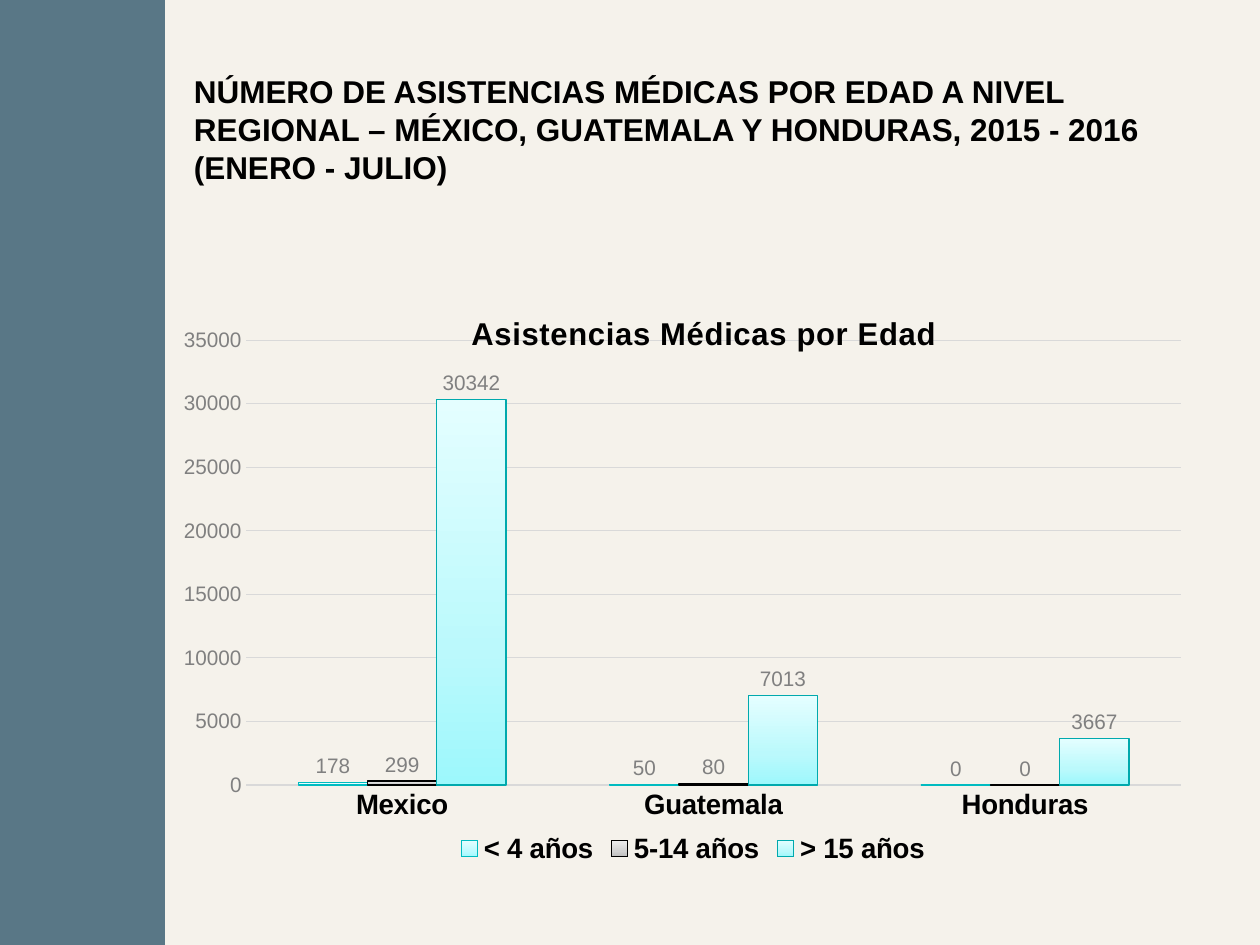
from lxml import etree
from pptx import Presentation
from pptx.chart.data import CategoryChartData
from pptx.dml.color import RGBColor
from pptx.enum import chart as charts, shapes, text
from pptx.oxml import parse_xml
from pptx.oxml.ns import nsdecls, qn
from pptx.util import Pt

CREAM = RGBColor(0xF5, 0xF2, 0xEB)
SLATE = RGBColor(0x59, 0x77, 0x86)
BLACK = RGBColor(0, 0, 0)
GRAY = RGBColor(0x80, 0x80, 0x80)
GRID = RGBColor(0xD9, 0xD9, 0xD9)
AQUA = [RGBColor(0xA2, 0xFA, 0xFF), RGBColor(0xBD, 0xFB, 0xFF), RGBColor(0xE6, 0xFE, 0xFF)]
SILVER = [RGBColor(0xBD, 0xBD, 0xBD), RGBColor(0xD1, 0xD1, 0xD1), RGBColor(0xEE, 0xEE, 0xEE)]
CYAN = [RGBColor(0x9D, 0xF8, 0xFC), RGBColor(0xBB, 0xF9, 0xFC), RGBColor(0xE4, 0xFE, 0xFF)]
AQUA_LINE = RGBColor(0, 0xBB, 0xC0)
CYAN_LINE = RGBColor(0, 0xA9, 0xAD)

AGE_GROUPS = [
    ("< 4 años", (178, 50, 0), AQUA, AQUA_LINE),
    ("5-14 años", (299, 80, 0), SILVER, BLACK),
    ("> 15 años", (30342, 7013, 3667), CYAN, CYAN_LINE),
]


def style_font(font, size, color, bold=False):
    font.name = "Arial"
    font.size = Pt(size)
    font.bold = bold
    font.color.rgb = color


def manual_layout(**values):
    layout = parse_xml(f"<c:layout {nsdecls('c')}><c:manualLayout/></c:layout>")
    for name, value in values.items():
        etree.SubElement(layout[0], qn(f"c:{name}")).set("val", str(value))
    return layout


presentation = Presentation()
presentation.slide_width = Pt(720)
presentation.slide_height = Pt(540)
slide = presentation.slides.add_slide(presentation.slide_layouts[6])
slide.background.fill.solid()
slide.background.fill.fore_color.rgb = CREAM

side_band = slide.shapes.add_shape(shapes.MSO_SHAPE.RECTANGLE, 0, 0, Pt(94.3), Pt(540))
side_band.shadow.inherit = False
side_band.fill.solid()
side_band.fill.fore_color.rgb = SLATE
side_band.line.fill.background()

heading = slide.shapes.add_textbox(Pt(103.7), Pt(60.5), Pt(573.8), Pt(26))
heading.text_frame.word_wrap = True
heading.text_frame.vertical_anchor = text.MSO_ANCHOR.MIDDLE
heading.text_frame.text = (
    "NÚMERO DE ASISTENCIAS MÉDICAS POR EDAD A NIVEL REGIONAL – "
    "MÉXICO, GUATEMALA Y HONDURAS, 2015 - 2016 (ENERO - JULIO)"
)
style_font(heading.text_frame.paragraphs[0].runs[0].font, 18, BLACK, True)

chart_data = CategoryChartData()
chart_data.categories = ["Mexico", "Guatemala", "Honduras"]
for name, values, _, _ in AGE_GROUPS:
    chart_data.add_series(name, values)
chart = slide.shapes.add_chart(
    charts.XL_CHART_TYPE.COLUMN_CLUSTERED, Pt(105.1), Pt(162), Pt(573.1), Pt(334.8), chart_data
).chart
style_font(chart.font, 10, BLACK)

chart.has_title = True
title_frame = chart.chart_title.text_frame
title_frame.text = "Asistencias Médicas por Edad"
title_run = title_frame.paragraphs[0].runs[0]
style_font(title_run.font, 18, BLACK, True)
title_run.font._element.set("spc", "40")
title_element = chart.chart_title._element
for layout in title_element.findall(qn("c:layout")):
    title_element.remove(layout)
title_element.find(qn("c:tx")).addnext(manual_layout(xMode="edge", yMode="edge", x=0.27, y=0.04))
chart.chart_title.include_in_layout = True

plot_area = chart._chartSpace.chart.plotArea
for layout in plot_area.findall(qn("c:layout")):
    plot_area.remove(layout)
plot_area.insert(0, manual_layout(
    layoutTarget="inner", xMode="edge", yMode="edge", x=0.048, y=0.097, w=0.946, h=0.759
))

chart.has_legend = True
chart.legend.position = charts.XL_LEGEND_POSITION.BOTTOM
chart.legend.include_in_layout = False
style_font(chart.legend.font, 16, BLACK, True)

category_axis = chart.category_axis
category_axis.major_tick_mark = charts.XL_TICK_MARK.NONE
category_axis.format.line.color.rgb = GRID
category_axis.format.line.width = Pt(0.75)
style_font(category_axis.tick_labels.font, 16, BLACK, True)

value_axis = chart.value_axis
value_axis.minimum_scale = 0
value_axis.maximum_scale = 35000
value_axis.major_unit = 5000
value_axis.major_tick_mark = charts.XL_TICK_MARK.NONE
value_axis.format.line.fill.background()
value_axis.major_gridlines.format.line.color.rgb = GRID
value_axis.major_gridlines.format.line.width = Pt(0.75)
style_font(value_axis.tick_labels.font, 12, GRAY)

plot = chart.plots[0]
plot.vary_by_categories = False
plot.gap_width = 150
plot.overlap = 0
for series, (_, _, shades, line_color) in zip(plot.series, AGE_GROUPS):
    fill = series.format.fill
    fill.gradient()
    fill.gradient_angle = 90
    stop_list = series._element.find(f".//{qn('a:gsLst')}")
    for stop in list(stop_list):
        stop_list.remove(stop)
    for position, shade in zip((0, 35000, 100000), shades):
        stop = etree.SubElement(stop_list, qn("a:gs"), pos=str(position))
        etree.SubElement(stop, qn("a:srgbClr"), val=str(shade))
    series.format.line.color.rgb = line_color
    series.format.line.width = Pt(0.75)
    labels = series.data_labels
    labels.show_value = True
    labels.position = charts.XL_LABEL_POSITION.OUTSIDE_END
    style_font(labels.font, 12, GRAY)

presentation.save("out.pptx")
